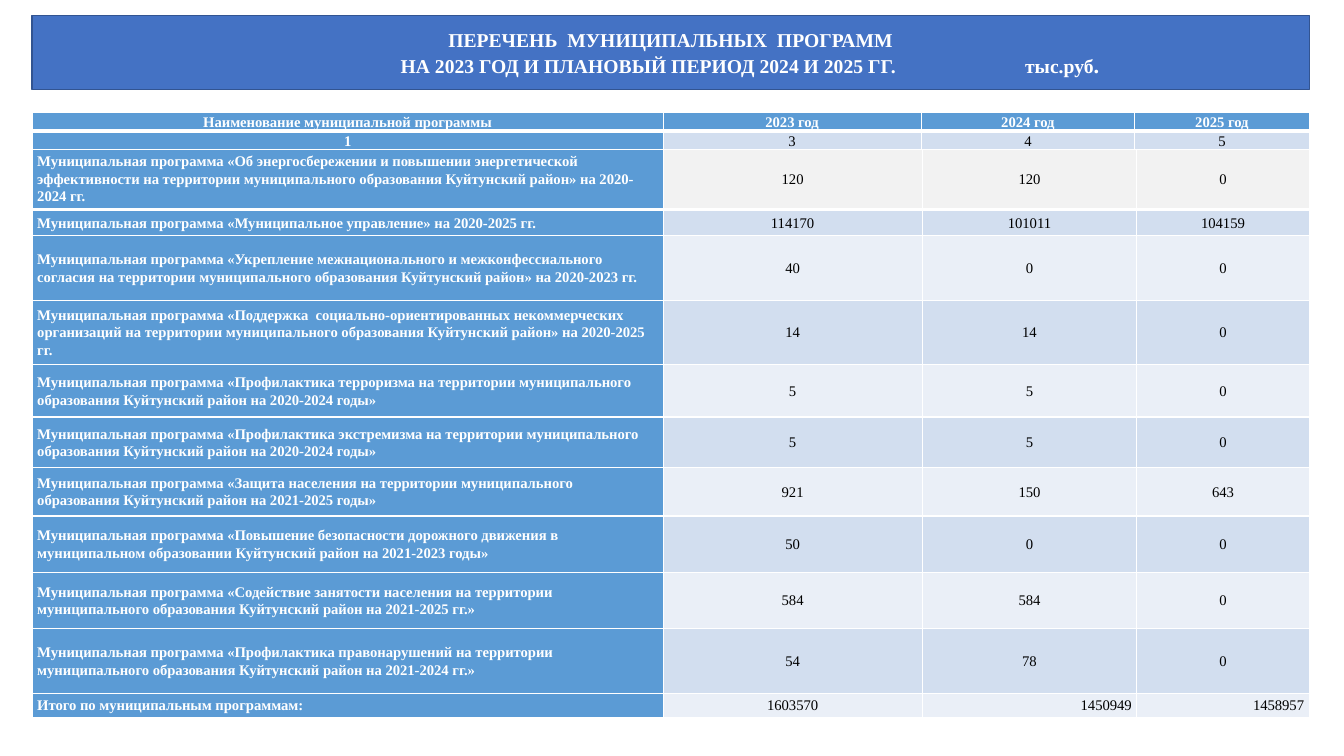
from lxml.etree import SubElement
from pptx import Presentation
from pptx.dml.color import RGBColor
from pptx.enum.text import MSO_ANCHOR, MSO_AUTO_SIZE, PP_ALIGN
from pptx.oxml.ns import qn
from pptx.util import Pt

COLORS = {
    "banner": "4472C4", "banner_line": "325491", "label": "5B9BD5",
    "first": "F2F2F2", "dark_band": "D2DEEF", "light_band": "EAEFF7",
    "white": "FFFFFF", "black": "000000",
}
LEFT, WIDTH = 23, 912.2

PROGRAMS = [
    ("«Об энергосбережении и повышении энергетической эффективности на территории "
     "муниципального образования Куйтунский район» на 2020-2024 гг.", 120, 120, 0),
    ("«Муниципальное управление» на 2020-2025 гг.", 114170, 101011, 104159),
    ("«Укрепление межнационального и межконфессионального согласия на территории "
     "муниципального образования Куйтунский район» на 2020-2023 гг.".replace(
         "межконфессионального", "межконфессиального"), 40, 0, 0),
    ("«Поддержка  социально-ориентированных некоммерческих организаций на территории "
     "муниципального образования Куйтунский район» на 2020-2025 гг.", 14, 14, 0),
    ("«Профилактика терроризма на территории муниципального образования "
     "Куйтунский район на 2020-2024 годы»", 5, 5, 0),
    ("«Профилактика экстремизма на территории муниципального образования "
     "Куйтунский район на 2020-2024 годы»", 5, 5, 0),
    ("«Защита населения на территории муниципального образования "
     "Куйтунский район на 2021-2025 годы»", 921, 150, 643),
    ("«Повышение безопасности дорожного движения в муниципальном образовании "
     "Куйтунский район на 2021-2023 годы»", 50, 0, 0),
    ("«Содействие занятости населения на территории муниципального образования "
     "Куйтунский район на 2021-2025 гг.»", 584, 584, 0),
    ("«Профилактика правонарушений на территории муниципального образования "
     "Куйтунский район на 2021-2024 гг.»", 54, 78, 0),
]
TOTAL = ("Итого по муниципальным программам:", 1603570, 1450949, 1458957)
PROGRAM_HEIGHTS = [43.9, 18.7, 46.1, 46.1, 37.4, 36, 34.6, 40.3, 40.3, 46.1, 17.3]


class ProgramPage:
    """Holds the deck style and the current slide."""

    font = "Times New Roman"
    cell_size = 10.5

    def __init__(self, deck):
        self.page = deck.slides.add_slide(deck.slide_layouts[5])

    def span(self, para, text, size, color, bold):
        run = para.add_run()
        run.text = text
        run.font.name = self.font
        run.font.size = Pt(size)
        run.font.bold = bold
        run.font.color.rgb = RGBColor.from_string(COLORS[color])

    def banner(self, top, height, heading, period, unit, tabs):
        box = self.page.shapes.title
        box.left, box.top = Pt(LEFT), Pt(top)
        box.width, box.height = Pt(WIDTH), Pt(height)
        outline = SubElement(box.element.spPr, qn("a:prstGeom"), prst="snip2DiagRect")
        SubElement(outline, qn("a:avLst"))
        box.fill.solid()
        box.fill.fore_color.rgb = RGBColor.from_string(COLORS["banner"])
        box.line.color.rgb = RGBColor.from_string(COLORS["banner_line"])
        box.line.width = Pt(1)

        frame = box.text_frame
        frame.word_wrap = True
        frame.auto_size = MSO_AUTO_SIZE.NONE
        frame.vertical_anchor = MSO_ANCHOR.MIDDLE
        first, second = frame.paragraphs[0], frame.add_paragraph()
        for para, align in ((first, PP_ALIGN.CENTER), (second, PP_ALIGN.LEFT)):
            para.alignment = align
            para.line_spacing = 1.0
            para.space_before = Pt(0)
        self.span(first, heading, 14, "white", True)

        # Tab stops place the period and the unit on one line
        stops = SubElement(second._p.get_or_add_pPr(), qn("a:tabLst"))
        for position in tabs:
            SubElement(stops, qn("a:tab"), pos=str(Pt(position)), algn="l")
        self.span(second, f"\t{period}\t{unit}", 14, "white", True)
        self.span(second, ".", 16, "white", True)

    def border(self, cell, bottom):
        for side, width in (("L", 1), ("R", 1), ("T", 1), ("B", bottom)):
            line = SubElement(cell._tc.get_or_add_tcPr(), qn(f"a:ln{side}"), w=str(Pt(width)))
            fill = SubElement(line, qn("a:solidFill"))
            SubElement(fill, qn("a:srgbClr"), val=COLORS["white"])

    def cell(self, cell, text, fill, align, margin, bottom):
        self.border(cell, bottom)
        cell.fill.solid()
        cell.fill.fore_color.rgb = RGBColor.from_string(COLORS[fill])
        cell.vertical_anchor = MSO_ANCHOR.MIDDLE
        cell.margin_left = cell.margin_right = Pt(margin)
        cell.margin_top = cell.margin_bottom = Pt(0)
        para = cell.text_frame.paragraphs[0]
        para.alignment = align
        para.line_spacing = 1.07
        on_label = fill == "label"
        self.span(para, text, self.cell_size, "white" if on_label else "black", on_label)

    def table(self, top, columns, heights, rows, fills, aligns, margin):
        """fills and aligns are functions of the row and column index."""
        frame = self.page.shapes.add_table(
            len(rows), len(columns), Pt(LEFT), Pt(top), Pt(WIDTH), Pt(sum(heights)))
        grid = frame.table
        grid.first_row = grid.horz_banding = False
        for column, width in zip(grid.columns, columns):
            column.width = Pt(width)
        for r, (values, height) in enumerate(zip(rows, heights)):
            grid.rows[r].height = Pt(height)
            for c, value in enumerate(values):
                self.cell(grid.cell(r, c), str(value), fills(r, c), aligns(r, c),
                          margin, 3 if r == 0 else 1)


def program_fill(r, c):
    if c == 0:
        return "label"
    if r == 0:
        return "first"
    return "dark_band" if r % 2 else "light_band"


def program_align(r, c):
    if c == 0:
        return PP_ALIGN.LEFT
    return PP_ALIGN.RIGHT if r == len(PROGRAMS) and c > 1 else PP_ALIGN.CENTER


def main():
    deck = Presentation()
    deck.slide_width, deck.slide_height = Pt(960), Pt(540)
    page = ProgramPage(deck)

    # Title banner
    page.banner(11.2, 52.8, "ПЕРЕЧЕНЬ  МУНИЦИПАЛЬНЫХ  ПРОГРАММ",
                "НА 2023 ГОД И ПЛАНОВЫЙ ПЕРИОД 2024 И 2025 ГГ.", "тыс.руб", (256, 702))

    # Programs and total
    rows = [(f"Муниципальная программа {name}", *sums) for name, *sums in PROGRAMS]
    page.table(105.8, (450.7, 185, 153.4, 123.1), PROGRAM_HEIGHTS, rows + [TOTAL],
               program_fill, program_align, 3.6)

    # Column headings
    headings = [("Наименование муниципальной программы", "2023 год", "2024 год", "2025 год"),
                (1, 3, 4, 5)]
    page.table(80.6, (450.7, 184.3, 152.6, 124.6), (13.2, 13.2), headings,
               lambda r, c: "dark_band" if r and c else "label",
               lambda r, c: PP_ALIGN.CENTER, 5)

    deck.save("out.pptx")


if __name__ == "__main__":
    main()
